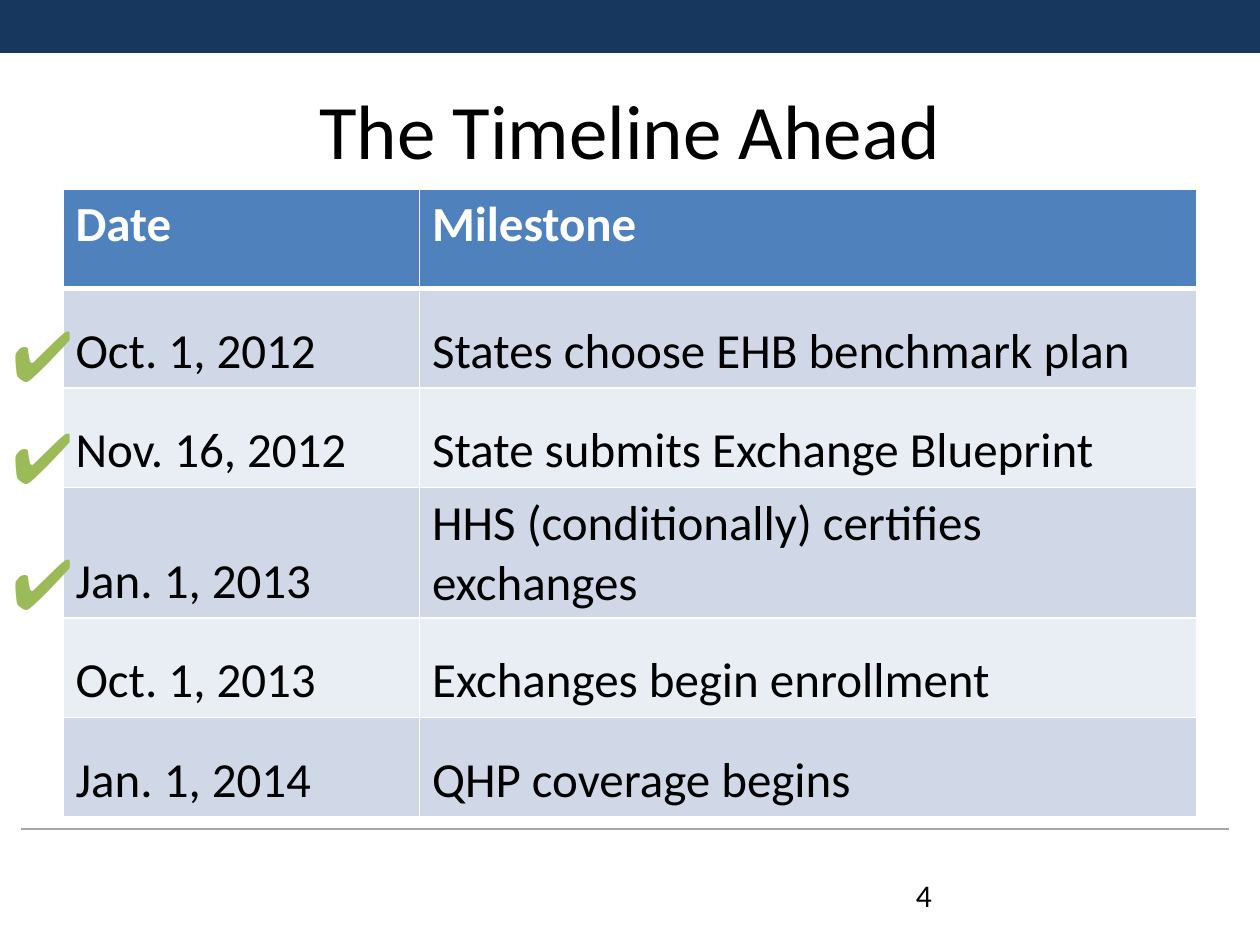
from dataclasses import dataclass

from lxml.etree import SubElement
from pptx import Presentation
from pptx.dml.color import RGBColor
from pptx.enum.shapes import MSO_CONNECTOR, MSO_SHAPE
from pptx.enum.text import MSO_ANCHOR, PP_ALIGN
from pptx.oxml.ns import qn
from pptx.util import Inches, Pt


@dataclass(frozen=True)
class Theme:
    """Colours, font and type sizes of the slide."""
    font: str = "Calibri"
    navy: str = "17375E"
    rule: str = "A6A6A6"
    ink: str = "000000"
    white: str = "FFFFFF"
    head: str = "4F81BD"
    bands: tuple = ("D0D8E8", "E9EDF4")
    tick: str = "9BBB59"
    title: int = 44
    mark: int = 40
    body: int = 28
    page: int = 18


THEME = Theme()
ROWS = [
    ("Date", "Milestone"),
    ("Oct. 1, 2012", "States choose EHB benchmark plan"),
    ("Nov. 16, 2012", "State submits Exchange Blueprint"),
    ("Jan. 1, 2013", "HHS (conditionally) certifies exchanges"),
    ("Oct. 1, 2013", "Exchanges begin enrollment"),
    ("Jan. 1, 2014", "QHP coverage begins"),
]


def rgb(code):
    """Turn a hex code into a colour."""
    return RGBColor.from_string(code)


def style(frame, size, color, bold=False):
    """Format every run in a text frame."""
    for para in frame.paragraphs:
        for run in para.runs:
            font = run.font
            font.name, font.size, font.bold = THEME.font, Pt(size), bold
            font.color.rgb = rgb(color)


def add_text(slide, box, text, size, color, wrap=True):
    """Place a line of text in a box and return its frame."""
    frame = slide.shapes.add_textbox(*map(Inches, box)).text_frame
    frame.word_wrap = wrap
    frame.text = text
    style(frame, size, color)
    return frame


def add_frame(slide, box):
    """Draw the top band and the footer rule of the page."""
    left, top, width, height = box
    band = slide.shapes.add_shape(
        MSO_SHAPE.RECTANGLE, *map(Inches, (left, top, width, 0.42)))
    band.shadow.inherit = False
    band.fill.solid()
    band.fill.fore_color.rgb = rgb(THEME.navy)
    band.line.fill.background()
    base = top + height - 0.92
    ends = (left + 0.17, base, left + width - 0.25, base)
    line = slide.shapes.add_connector(
        MSO_CONNECTOR.STRAIGHT, *map(Inches, ends))
    line.line.color.rgb = rgb(THEME.rule)
    line.line.width = Pt(0.75)
    SubElement(line._element.spPr, qn("a:effectLst"))


def add_title(slide, box, text):
    """Place the centred title."""
    frame = add_text(slide, box, text, THEME.title, THEME.ink)
    frame.vertical_anchor = MSO_ANCHOR.MIDDLE
    frame.paragraphs[0].alignment = PP_ALIGN.CENTER


def add_edges(cell, row):
    """Draw white cell borders, thick under the header row."""
    props = cell._tc.get_or_add_tcPr()
    thick = {("B", 0), ("T", 1)}
    for side in "LRTB":
        width = Pt(3 if (side, row) in thick else 1)
        edge = SubElement(props, qn(f"a:ln{side}"), w=str(int(width)))
        fill = SubElement(edge, qn("a:solidFill"))
        SubElement(fill, qn("a:srgbClr"), val=THEME.white)


def add_dates(slide, box, rows):
    """Build the table of dates and milestones."""
    left, top, width, height = box
    table = slide.shapes.add_table(
        len(rows), 2, *map(Inches, box)).table
    first = 2.83
    for col, size in zip(table.columns, (first, width - first)):
        col.width = Inches(size)
    for r, texts in enumerate(rows):
        table.rows[r].height = Inches(height / len(rows))
        for c, text in enumerate(texts):
            cell = table.cell(r, c)
            cell.text_frame.text = text
            add_edges(cell, r)
            cell.fill.solid()
            if r == 0:
                shade, ink = THEME.head, THEME.white
            else:
                shade, ink = THEME.bands[(r - 1) % 2], THEME.ink
                cell.vertical_anchor = MSO_ANCHOR.BOTTOM
            cell.fill.fore_color.rgb = rgb(shade)
            style(cell.text_frame, THEME.body, ink, r == 0)


def add_ticks(slide, box, drops):
    """Mark the finished rows with ticks down the left edge."""
    left, top, width, height = box
    for drop in drops:
        place = (left, top + drop, width, height)
        add_text(slide, place, "✔", THEME.mark, THEME.tick, wrap=False)


def main():
    """Build and save the slide."""
    deck = Presentation()
    deck.slide_width, deck.slide_height = Inches(10), Inches(7.5)
    slide = deck.slides.add_slide(deck.slide_layouts[6])
    add_frame(slide, (0, 0, 10, 7.5))
    add_title(slide, (0.5, 0.5, 9, 1.05), "The Timeline Ahead")
    add_dates(slide, (0.5, 1.5, 9, 4.74), ROWS)
    add_text(slide, (7.17, 6.9, 2.33, 0.4), "4", THEME.page, THEME.ink)
    add_ticks(slide, (0, 2.42, 0.76, 0.77), (0, 0.81, 1.81))
    deck.save("out.pptx")


if __name__ == "__main__":
    main()
